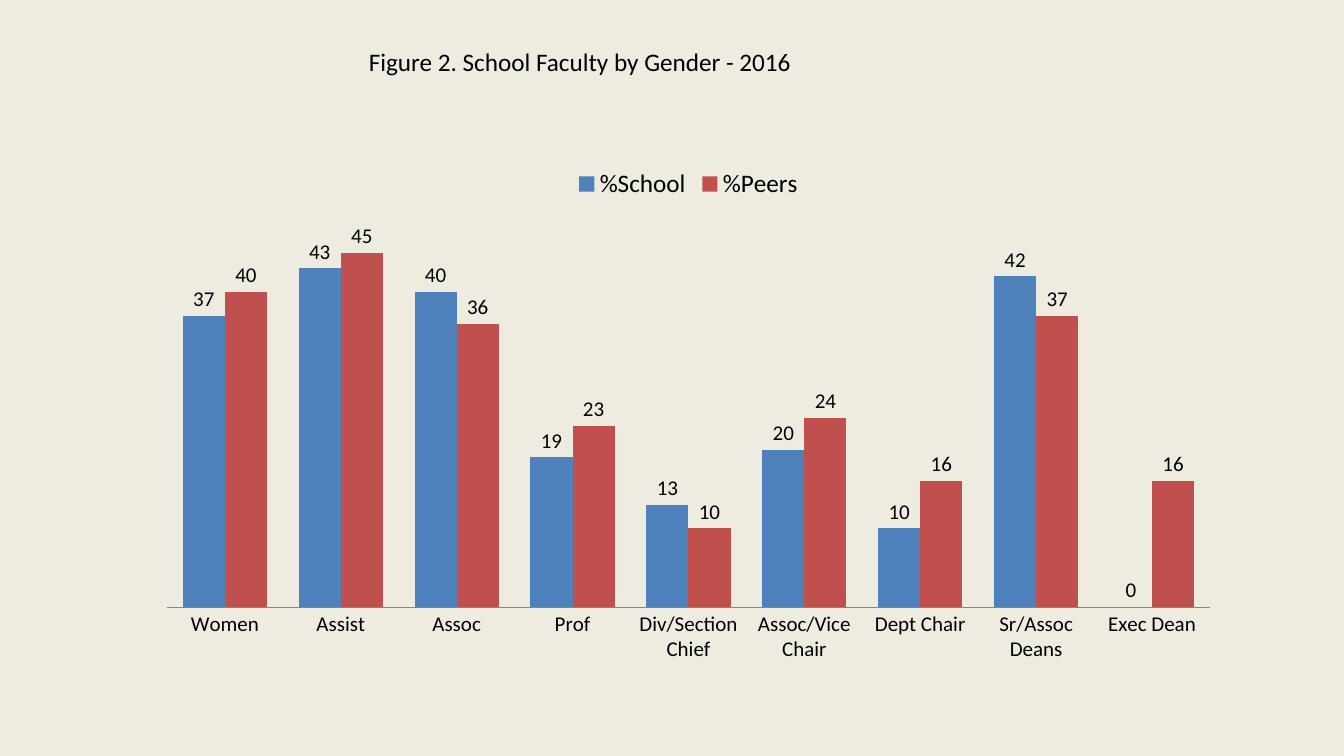
from lxml import etree
from pptx import Presentation
from pptx.chart.data import CategoryChartData
from pptx.dml.color import RGBColor
from pptx.enum.chart import XL_CHART_TYPE, XL_LABEL_POSITION, XL_LEGEND_POSITION, XL_TICK_MARK
from pptx.enum.text import MSO_ANCHOR, MSO_AUTO_SIZE, PP_ALIGN
from pptx.oxml.ns import qn
from pptx.util import Cm, Pt

FONT = "Calibri"
BLACK = "000000"
RANKS = ["Women", "Assist", "Assoc", "Prof", "Div/Section Chief",
         "Assoc/Vice Chair", "Dept Chair", "Sr/Assoc Deans", "Exec Dean"]
SERIES = [
    ("%School", "4F81BD", [37, 43, 40, 19, 13, 20, 10, 42, 0]),
    ("%Peers", "C0504D", [40, 45, 36, 23, 10, 24, 16, 37, 16]),
]


def color(value):
    return RGBColor.from_string(value)


def format_font(font, size, fill=BLACK):
    font.name = FONT
    font.size = Pt(size)
    font.bold = False
    font.color.rgb = color(fill)


def write_text(frame, text, size=18, fill=BLACK, align=PP_ALIGN.LEFT):
    para = frame.paragraphs[0]
    para.alignment = align
    span = para.add_run()
    span.text = text
    format_font(span.font, size, fill)


def add_title(page, text, left, top, width, height):
    title = page.shapes.title
    title.left, title.top, title.width, title.height = left, top, width, height
    frame = title.text_frame
    frame.word_wrap = True
    frame.auto_size = MSO_AUTO_SIZE.NONE
    frame.vertical_anchor = MSO_ANCHOR.TOP
    write_text(frame, text)


def set_plot_area(chart, **fractions):
    """Fix the inner plot area as fractions of the chart box."""
    plot_area = chart.plots[0]._element.getparent()
    for old in plot_area.findall(qn("c:layout")):
        plot_area.remove(old)
    layout = etree.Element(qn("c:layout"))
    plot_area.insert(0, layout)
    manual = etree.SubElement(layout, qn("c:manualLayout"))
    settings = {"layoutTarget": "inner", "xMode": "edge", "yMode": "edge", **fractions}
    for name, value in settings.items():
        etree.SubElement(manual, qn(f"c:{name}")).set("val", str(value))


def add_gender_chart(page, left, top, width, height):
    data = CategoryChartData(number_format="0")
    data.categories = RANKS
    for name, _, values in SERIES:
        data.add_series(name, values)
    chart = page.shapes.add_chart(
        XL_CHART_TYPE.COLUMN_CLUSTERED, left, top, width, height, data).chart
    format_font(chart.font, 18)
    chart.has_title = False

    # Legend
    chart.has_legend = True
    chart.legend.position = XL_LEGEND_POSITION.TOP
    chart.legend.include_in_layout = False
    format_font(chart.legend.font, 18)

    # Axes
    ranks = chart.category_axis
    ranks.major_tick_mark = XL_TICK_MARK.NONE
    ranks.format.line.color.rgb = color("868686")
    format_font(ranks.tick_labels.font, 15)
    percent = chart.value_axis
    percent.minimum_scale, percent.maximum_scale = 0, 50
    percent.has_major_gridlines = False
    percent.visible = False

    # Columns and their values
    plot = chart.plots[0]
    plot.gap_width = 75
    plot.overlap = 0
    plot.vary_by_categories = False
    for series, (_, fill, _) in zip(plot.series, SERIES):
        series.invert_if_negative = False
        series.format.fill.solid()
        series.format.fill.fore_color.rgb = color(fill)
        labels = series.data_labels
        labels.show_value = True
        labels.position = XL_LABEL_POSITION.OUTSIDE_END
        format_font(labels.font, 15)
    set_plot_area(chart, x=0.02, y=0.11, w=0.96, h=0.76)


def main():
    deck = Presentation()
    deck.slide_width, deck.slide_height = Cm(33.87), Cm(19.05)
    page = deck.slides.add_slide(deck.slide_layouts[5])
    page.background.fill.solid()
    page.background.fill.fore_color.rgb = color("EEECE1")
    add_gender_chart(page, Cm(3.66), Cm(3.94), Cm(27.38), Cm(13.06))
    add_title(page, "Figure 2. School Faculty by Gender - 2016",
              Cm(9.04), Cm(1.04), Cm(15.52), Cm(1.02))
    deck.save("out.pptx")


if __name__ == "__main__":
    main()
